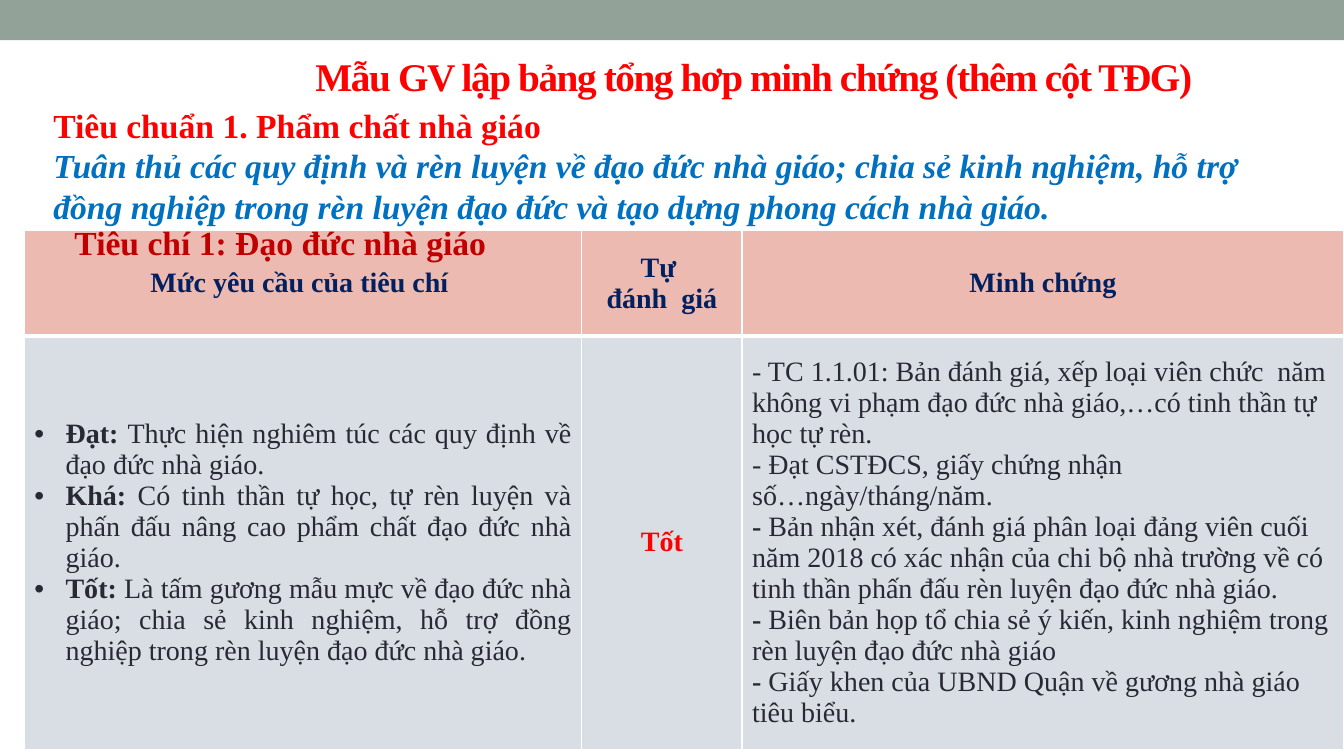
from lxml import etree
from pptx import Presentation
from pptx.dml.color import RGBColor
from pptx.enum.shapes import MSO_SHAPE
from pptx.enum.text import MSO_ANCHOR, PP_ALIGN
from pptx.oxml.ns import qn
from pptx.util import Emu, Pt

RECT = MSO_SHAPE.RECTANGLE
MIDDLE, TOP = MSO_ANCHOR.MIDDLE, MSO_ANCHOR.TOP
LEFT, CENTER, JUSTIFY = PP_ALIGN.LEFT, PP_ALIGN.CENTER, PP_ALIGN.JUSTIFY
FONT = "Times New Roman"
PX = 9144  # 100 px to the inch
COLORS = {
    "bar": "93A299", "red": "FF0000", "blue": "0070C0", "dark": "C00000",
    "navy": "002060", "ink": "292934", "head": "EDBAB1", "body": "D9DEE4",
    "white": "FFFFFF",
}

HEADS = [["Mức yêu cầu của tiêu chí "], ["Tự ", "đánh  giá"], ["Minh chứng"]]
LEVELS = [
    ("Đạt: ", "Thực hiện nghiêm túc các quy định về đạo đức nhà giáo."),
    ("Khá: ", "Có tinh thần tự học, tự rèn luyện và phấn đấu nâng cao "
              "phẩm chất đạo đức nhà giáo."),
    ("Tốt: ", "Là tấm gương mẫu mực về đạo đức nhà giáo; chia sẻ kinh nghiệm, "
              "hỗ trợ đồng nghiệp trong rèn luyện đạo đức nhà giáo. "),
]
PROOFS = [
    ("", "- TC 1.1.01: Bản đánh giá, xếp loại viên chức  năm không vi phạm "
         "đạo đức nhà giáo,…có tinh thần tự học tự rèn."),
    ("", "- Đạt CSTĐCS, giấy chứng nhận số…ngày/tháng/năm."),
    ("- ", "Bản nhận xét, đánh giá phân loại đảng viên cuối năm 2018 có xác "
           "nhận của chi bộ nhà trường về có tinh thần phấn đấu rèn luyện "
           "đạo đức nhà giáo."),
    ("- ", "Biên bản họp tổ chia sẻ ý kiến, kinh nghiệm trong rèn luyện "
           "đạo đức nhà giáo"),
    ("- ", "Giấy khen của UBND Quận về gương nhà giáo tiêu biểu."),
]


def px(*sizes):
    return [Emu(size * PX) for size in sizes]


def rgb(name):
    return RGBColor.from_string(COLORS[name])


def write(para, text, size=20, color="ink", bold=True, italic=False, space=0):
    run = para.add_run()
    run.text = text
    font = run.font
    font.name, font.size = FONT, Pt(size)
    font.bold, font.italic = bold, italic
    font.color.rgb = rgb(color)
    if space:
        run.font._element.set("spc", str(space * 100))


def lines(frame, count, align=LEFT):
    """Give the frame the wanted number of paragraphs."""
    paras = [frame.paragraphs[0]]
    paras += [frame.add_paragraph() for _ in range(count - 1)]
    for para in paras:
        para.alignment = align
    return paras


def bullet(para, indent):
    props = para._p.get_or_add_pPr()
    props.set("marL", str(indent * PX))
    props.set("indent", str(-indent * PX))
    etree.SubElement(props, qn("a:buFont"), typeface="Arial")
    etree.SubElement(props, qn("a:buChar"), char="•")


def border(cell, **widths):
    props = cell._tc.get_or_add_tcPr()
    for side in "LRTB":
        line = etree.SubElement(props, qn("a:ln" + side),
                                w=str(Pt(widths.get(side, 1))))
        fill = etree.SubElement(line, qn("a:solidFill"))
        etree.SubElement(fill, qn("a:srgbClr"), val=COLORS["white"])


def label(slide, box, align=LEFT, anchor=TOP):
    frame = slide.shapes.add_textbox(*px(*box)).text_frame
    frame.word_wrap = True
    frame.vertical_anchor = anchor
    return lines(frame, 1, align)[0]


def header(slide, box):
    x, y, w, h = box
    bar = slide.shapes.add_shape(RECT, *px(x, y, w, 40))
    bar.shadow.inherit = False
    bar.fill.solid()
    bar.fill.fore_color.rgb = rgb("bar")
    bar.line.fill.background()
    title = label(slide, (x + 281, y + 39, 933, h - 39), CENTER, MIDDLE)
    write(title, "Mẫu GV lập bảng tổng hơp minh chứng (thêm cột TĐG)",
          size=28, color="red", space=-1)


def intro(slide, box):
    x, y, w, h = box
    para = label(slide, (x, y, w, h))
    write(para, "Tiêu chuẩn 1. Phẩm chất nhà giáo", size=24, color="red")
    para.add_line_break()
    write(para, "Tuân thủ các quy định và rèn luyện về đạo đức nhà giáo; "
          "chia sẻ kinh nghiệm, hỗ trợ đồng nghiệp trong rèn luyện đạo đức "
          "và tạo dựng phong cách nhà giáo.",
          size=24, color="blue", italic=True)
    name = label(slide, (x + 21, y + 116, 1085, 50))
    write(name, "Tiêu chí 1: Đạo đức nhà giáo", size=24, color="dark")


def grid(slide, box):
    table = slide.shapes.add_table(2, 3, *px(*box)).table
    for col, width in zip(table.columns, px(553, 159, 597)):
        col.width = width
    for row, height in zip(table.rows, px(104, 356)):
        row.height = height
    for r, tone in enumerate(("head", "body")):
        for cell in table.rows[r].cells:
            border(cell, **{"T" if r else "B": 3})
            cell.fill.solid()
            cell.fill.fore_color.rgb = rgb(tone)
            cell.vertical_anchor = MIDDLE

    # Heading row
    for c, texts in enumerate(HEADS):
        frame = table.cell(0, c).text_frame
        for para, text in zip(lines(frame, len(texts), CENTER), texts):
            write(para, text, color="navy")

    # Levels, rating and evidence
    for c, items, align in ((0, LEVELS, JUSTIFY), (2, PROOFS, LEFT)):
        frame = table.cell(1, c).text_frame
        for para, (lead, text) in zip(lines(frame, len(items), align), items):
            if items is LEVELS:
                bullet(para, 31)
            if lead:
                write(para, lead)
            write(para, text, bold=False)
    rating = lines(table.cell(1, 1).text_frame, 1, CENTER)[0]
    write(rating, "Tốt", color="red")


def main():
    deck = Presentation()
    deck.slide_width, deck.slide_height = px(1333, 750)
    slide = deck.slides.add_slide(deck.slide_layouts[6])
    header(slide, (0, 0, 1333, 111))
    grid(slide, (24, 229, 1309, 460))
    intro(slide, (43, 99, 1271, 131))
    deck.save("out.pptx")


if __name__ == "__main__":
    main()
